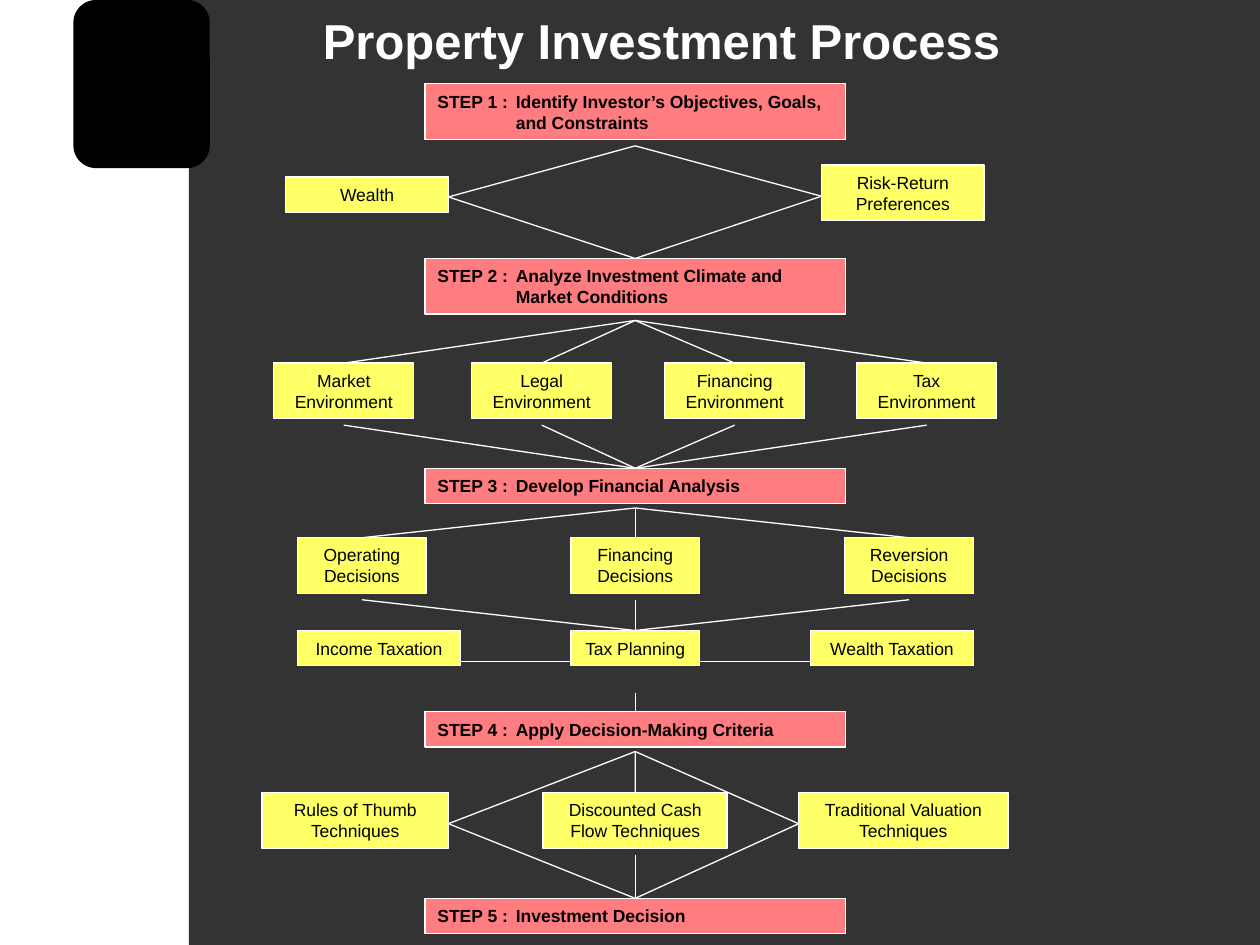
from lxml import etree
from pptx import Presentation
from pptx import util as u
from pptx.dml.color import RGBColor
from pptx.enum import shapes, text
from pptx.oxml.ns import qn

TITLE = "Property Investment Process"
COLOURS = {"panel": "000000", "step": "FF7C80", "factor": "FFFF66",
           "line": "FFFFFF", "ink": "000000", "title": "FFFFFF"}
FONT = "Arial"

# Lengths in cm. Height and reach (where lines leave below) by text lines
HEIGHT = {1: 0.71, 2: 1.12}
REACH = {1: 0.8, 2: 1.25}
STEP_LEFT, STEP_WIDTH, STEP_INDENT = 8.57, 8.47, 1.58

# name, wording, top, text lines
STEPS = [
    ("STEP 1", "Identify Investor’s Objectives, Goals, and Constraints", 1.69, 2),
    ("STEP 2", "Analyze Investment Climate and Market Conditions", 5.21, 2),
    ("STEP 3", "Develop Financial Analysis", 9.44, 1),
    ("STEP 4", "Apply Decision-Making Criteria", 14.35, 1),
    ("STEP 5", "Investment Decision", 18.11, 1),
]
# top, text lines, reach, [(label, left, width)]
FACTOR_ROWS = [
    (3.57, 1, REACH[1], [("Wealth", 5.76, 3.28)]),
    (3.33, 2, REACH[2], [("Risk-Return Preferences", 16.56, 3.28)]),
    (7.32, 2, REACH[2], [("Market Environment", 5.52, 2.82),
                         ("Legal Environment", 9.51, 2.82),
                         ("Financing Environment", 13.4, 2.82),
                         ("Tax Environment", 17.27, 2.82)]),
    (10.84, 2, REACH[2], [("Operating Decisions", 6, 2.59),
                          ("Financing Decisions", 11.51, 2.59),
                          ("Reversion Decisions", 17.03, 2.59)]),
    (12.71, 1, REACH[2], [("Tax Planning", 11.51, 2.59),
                          ("Income Taxation", 6, 3.28),
                          ("Wealth Taxation", 16.34, 3.28)]),
    (15.98, 2, REACH[2], [("Rules of Thumb Techniques", 5.28, 3.76),
                          ("Discounted Cash Flow Techniques", 10.95, 3.71),
                          ("Traditional Valuation Techniques", 16.1, 4.22)]),
]
# upper box, lower box, [(factor between them, side entered, side left)]
FANS = [
    ("STEP 1", "STEP 2", [("Wealth", "right", "right"),
                          ("Risk-Return Preferences", "left", "left")]),
    ("STEP 2", "STEP 3", [(f"{kind} Environment", "top", "bottom")
                          for kind in ("Market", "Legal", "Financing", "Tax")]),
    ("STEP 3", "Tax Planning", [(f"{kind} Decisions", "top", "bottom")
                                for kind in ("Operating", "Financing", "Reversion")]),
    ("STEP 4", "STEP 5", [("Rules of Thumb Techniques", "right", "right"),
                          ("Discounted Cash Flow Techniques", "top", "bottom"),
                          ("Traditional Valuation Techniques", "left", "left")]),
]
SINGLE_LINKS = [
    ("Income Taxation", "right", "Tax Planning", "left"),
    ("Tax Planning", "right", "Wealth Taxation", "left"),
    ("Tax Planning", "bottom", "STEP 4", "top"),
]

deck = Presentation()
deck.slide_width, deck.slide_height = u.Cm(25.4), u.Cm(19.05)
slide = deck.slides.add_slide(deck.slide_layouts[6])
boxes, ports = {}, {}


def colour(name):
    return RGBColor.from_string(COLOURS[name])


def add_block(kind, left, top, width, height, fill):
    block = slide.shapes.add_shape(kind, *map(u.Cm, (left, top, width, height)))
    block.shadow.inherit = False
    block.fill.solid()
    block.fill.fore_color.rgb = colour(fill)
    block.line.fill.background()
    return block


def write(frame, wording, size, ink, bold, align):
    frame.word_wrap = True
    paragraph = frame.paragraphs[0]
    paragraph.alignment = align
    run = paragraph.add_run()
    run.text = wording
    run.font.name, run.font.size, run.font.bold = FONT, u.Pt(size), bold
    run.font.color.rgb = colour(ink)
    return paragraph


def add_box(name, wording, left, top, width, lines, reach, fill, align):
    box = add_block(shapes.MSO_SHAPE.RECTANGLE, left, top, width, HEIGHT[lines], fill)
    box.line.color.rgb = colour("line")
    box.line.width = u.Pt(0.75)
    boxes[name] = box
    middle = left + width / 2
    ports[name] = {"top": (middle, top), "bottom": (middle, top + reach),
                   "left": (left, top + reach / 2),
                   "right": (left + width, top + reach / 2)}
    return write(box.text_frame, wording, 10, "ink", fill == "step", align)


def link(start, start_side, end, end_side):
    points = ports[start][start_side] + ports[end][end_side]
    line = slide.shapes.add_connector(shapes.MSO_CONNECTOR.STRAIGHT, *map(u.Cm, points))
    line.line.color.rgb = colour("line")
    line.line.width = u.Pt(0.75)
    etree.SubElement(line._element.spPr, qn("a:effectLst"))
    # Only the top ports lie exactly on a box side's middle
    if start_side == "top":
        line.begin_connect(boxes[start], 0)
    if end_side == "top":
        line.end_connect(boxes[end], 0)


# Backdrop: translucent panel and black tab
panel = add_block(shapes.MSO_SHAPE.RECTANGLE, 3.81, 0, 21.59, 19.05, "panel")
panel_colour = panel._element.spPr.find(qn("a:solidFill"))[0]
etree.SubElement(panel_colour, qn("a:alpha"), val="80000")
add_block(shapes.MSO_SHAPE.FLOWCHART_ALTERNATE_PROCESS, 1.48, 0, 2.75, 3.39, "panel")

# Steps, with a hanging indent after the step number
for name, wording, top, lines in STEPS:
    paragraph = add_box(name, f"{name} :\t{wording}", STEP_LEFT, top, STEP_WIDTH,
                        lines, REACH[lines], "step", text.PP_ALIGN.LEFT)
    indent = u.Cm(STEP_INDENT)
    properties = paragraph._p.get_or_add_pPr()
    properties.set("marL", str(indent))
    properties.set("indent", str(-indent))

# Factors
for top, lines, reach, factors in FACTOR_ROWS:
    for label, left, width in factors:
        add_box(label, label, left, top, width, lines, reach, "factor",
                text.PP_ALIGN.CENTER)

# Connecting lines
for upper, lower, factors in FANS:
    for factor, entered, left_by in factors:
        link(upper, "bottom", factor, entered)
        link(factor, left_by, lower, "top")
for ends in SINGLE_LINKS:
    link(*ends)

# Title
heading = slide.shapes.add_textbox(*map(u.Cm, (2.96, 0.08, 20.75, 1.45)))
write(heading.text_frame, TITLE, 28, "title", True, text.PP_ALIGN.CENTER)

deck.save("out.pptx")
